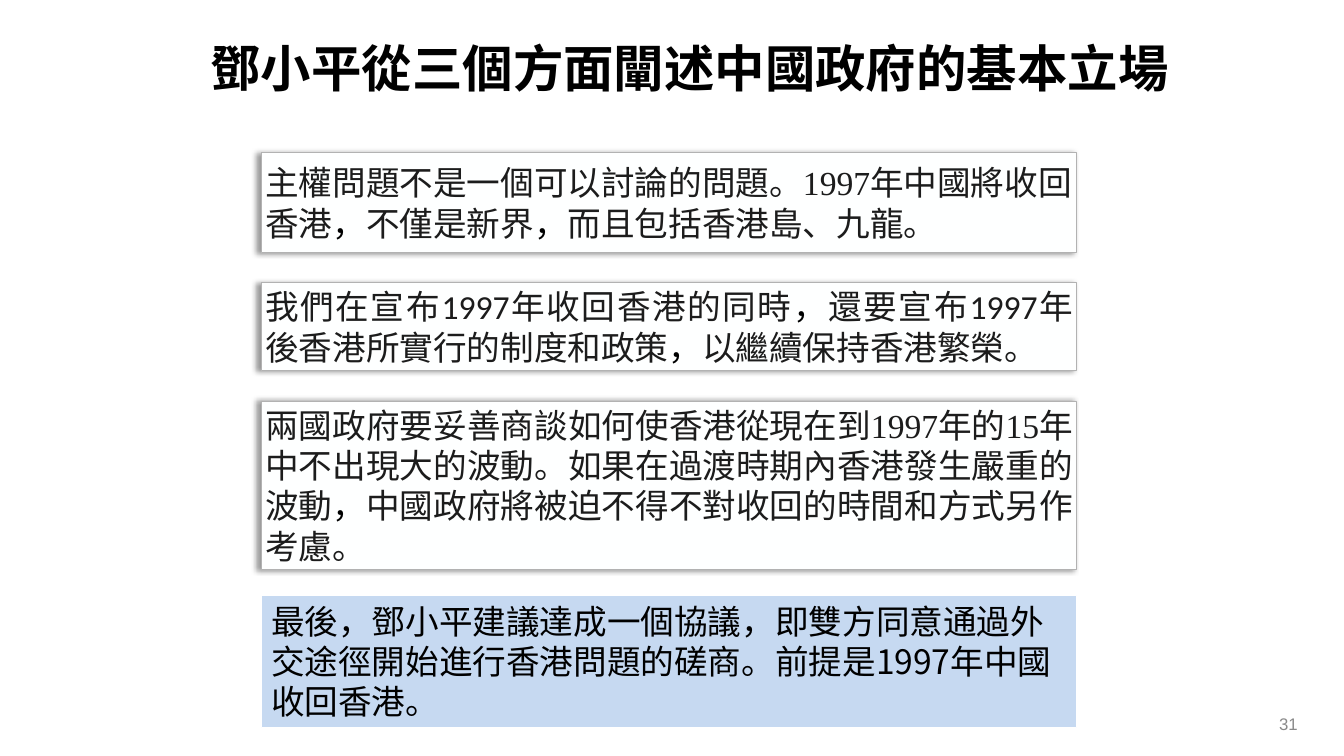
from itertools import groupby
from lxml import etree
from pptx import Presentation
from pptx import util as u
from pptx.dml.color import RGBColor
from pptx.enum import shapes, text
from pptx.oxml.ns import qn

NOTO = "Noto Sans CJK SC"
TIMES = "Times New Roman"
LEFT, WIDTH = 2.59, 8.09
INK = "1C1C1C"

CLAIMS = [
    (1.51, 1, text.PP_ALIGN.LEFT, [
        ("主權問題不是一個可以討論的問題。", NOTO),
        ("1997", TIMES),
        ("年中國將收回香港，不僅是新界，而且包括香港島、九龍。", NOTO),
    ]),
    (2.8, 0.88, text.PP_ALIGN.JUSTIFY, [
        ("我們在宣布1997年收回香港的同時，還要宣布1997年後香港所實行的制度和政策，以繼續保持香港繁榮。", "Calibri"),
    ]),
    (3.98, 1.67, text.PP_ALIGN.JUSTIFY, [
        ("兩國政府要妥善商談如何使香港從現在到", NOTO),
        ("1997年", TIMES),
        ("的", NOTO),
        ("15年", TIMES),
        ("中不出現大的波動。如果在過渡時期內香港發生嚴重的波動，中國政府將被迫不得不對收回的時間和方式另作考慮。", NOTO),
    ]),
]


def color(code):
    return RGBColor.from_string(code)


def style(run, size, face, code, bold=False):
    font = run.font
    font.size = u.Pt(size)
    font.name = face
    font.bold = bold
    font.color.rgb = color(code)
    if face != "Arial":
        east = etree.SubElement(run._r.get_or_add_rPr(), qn("a:ea"))
        east.set("typeface", NOTO)


def label(slide, box, words, size, face, code, bold=False,
          align=text.PP_ALIGN.LEFT, anchor=text.MSO_ANCHOR.TOP):
    frame = slide.shapes.add_textbox(*map(u.Inches, box)).text_frame
    frame.word_wrap = True
    frame.vertical_anchor = anchor
    frame.text = words
    para = frame.paragraphs[0]
    para.alignment = align
    style(para.runs[0], size, face, code, bold)


def panel(slide, top, height, fill, edge):
    box = map(u.Inches, (LEFT, top, WIDTH, height))
    shape = slide.shapes.add_shape(shapes.MSO_SHAPE.RECTANGLE, *box)
    shape.fill.solid()
    shape.fill.fore_color.rgb = color(fill)
    shape.line.color.rgb = color(edge)
    shape.line.width = u.Pt(0.75)
    shape.shadow.inherit = False
    shape.text_frame.word_wrap = True
    return shape


def shade(shape):
    effect = shape._element.spPr.find(qn("a:effectLst"))
    outer = etree.SubElement(
        effect, qn("a:outerShdw"), blurRad=str(u.Pt(4)), dist=str(u.Pt(3)),
        dir="10800000", algn="ctr", rotWithShape="0")
    tint = etree.SubElement(outer, qn("a:srgbClr"), val="000000")
    etree.SubElement(tint, qn("a:alpha"), val="40000")


def claim(slide, top, height, align, parts):
    shape = panel(slide, top, height, "FEFFFF", "B2B2B2")
    shade(shape)
    frame = shape.text_frame
    frame.margin_left = frame.margin_right = u.Inches(0.04)
    frame.margin_top = frame.margin_bottom = u.Inches(0.04)
    frame.vertical_anchor = text.MSO_ANCHOR.MIDDLE
    para = frame.paragraphs[0]
    para.alignment = align
    for words, face in parts:
        for comma, chars in groupby(words, lambda char: char == "，"):
            run = para.add_run()
            run.text = "".join(chars)
            style(run, 24, face, "000000" if comma else INK)


def closing(slide, words):
    frame = panel(slide, 5.91, 1.31, "C6D9F1", "FFFFFF").text_frame
    frame.vertical_anchor = text.MSO_ANCHOR.TOP
    frame.text = words
    para = frame.paragraphs[0]
    para.alignment = text.PP_ALIGN.LEFT
    style(para.runs[0], 24, NOTO, "000000")


def main():
    deck = Presentation()
    deck.slide_width = u.Inches(13.33)
    deck.slide_height = u.Inches(7.5)
    slide = deck.slides.add_slide(deck.slide_layouts[6])
    label(slide, (1.99, 0.32, 9.88, 0.71),
          "鄧小平從三個方面闡述中國政府的基本立場", 36, NOTO, "000000", True)
    for item in CLAIMS:
        claim(slide, *item)
    closing(slide, "最後，鄧小平建議達成一個協議，即雙方同意通過外交途徑開始進行香港問題的磋商。前提是1997年中國收回香港。")
    label(slide, (9.97, 6.98, 3, 0.4), "31", 12, "Arial", "898989",
          align=text.PP_ALIGN.RIGHT, anchor=text.MSO_ANCHOR.MIDDLE)
    deck.save("out.pptx")


if __name__ == "__main__":
    main()
